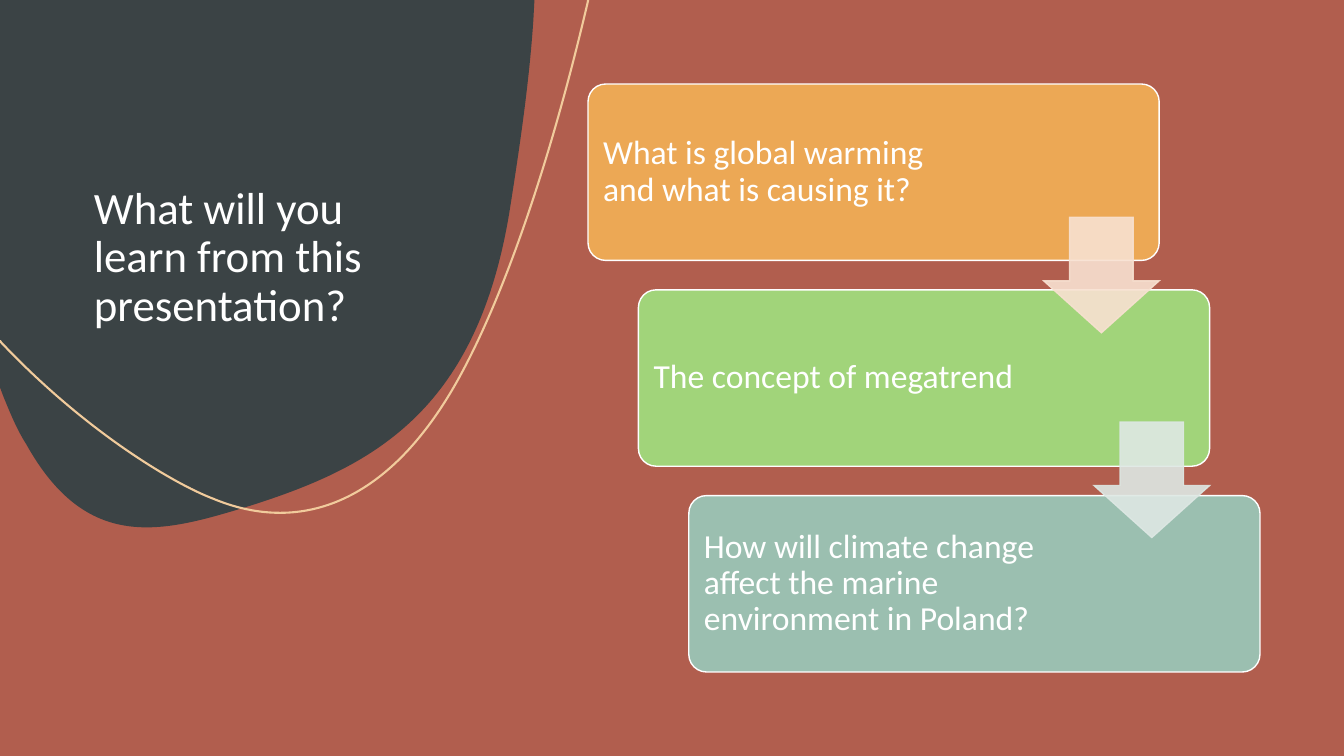
from pptx import Presentation, util as u
from pptx.dml.color import RGBColor
from pptx.enum import shapes, text
from pptx.oxml import parse_xml
from pptx.oxml.ns import nsdecls

# Content: boxes hold topic, text width, fill; arrows hold their colour
TITLE = "What will you learn from this presentation?"
TOPICS = [
    ("What is global warming and what is causing it?", 363, "ECA855"),
    ("The concept of megatrend", 377, "A1D47A"),
    ("How will climate change affect the marine environment in Poland?", 377, "9BBFB0"),
]
ARROWS = ["F8E1D1", "DEE8E4"]

# Outlines: a start point, then straight (1 point) or cubic (3 points) segments
BLOB_HEIGHT = 503
BLOB = [
    [(509, 0)],
    [(508, 19)],
    [(504, 79), (495, 140), (485, 203)],
    [(453, 395), (352, 446), (234, 483)],
    [(155, 507), (83, 527), (25, 423)],
    [(16, 409), (10, 394), (3, 377)],
    [(0, 369)],
    [(0, 0)],
]
SWOOSH_HEIGHT = 489
SWOOSH = [
    [(560, 0)],
    [(560, 1)],
    [(525, 151), (481, 281), (436, 362)],
    [(368, 484), (282, 508), (203, 475)],
    [(166, 461), (81, 411), (0, 325)],
    [(0, 324)],
]

THEME = dict(background="B15E4E", blob="3B4345", swoosh="F1CB9C", white="FFFFFF",
             font="Calibri", title_size=32, topic_size=24)

# Layout in px, 96 to the inch
PX = 9525
SLIDE = (1280, 720)
TITLE_AT = (80, 80, 320, 240)
BOX_AT, BOX_STEP = (560, 80, 544, 168), (48, 196)
ARROW_AT, ARROW_STEP = (994, 207, 110, 110), (48, 195)
TEXT_GAP = 5
INSET = u.Inches(0.1)


def emu(lengths):
    return [length * PX for length in lengths]


def stepped(at, step, index):
    left, top, width, height = at
    return left + index * step[0], top + index * step[1], width, height


def paint(fill, color):
    fill.solid()
    fill.fore_color.rgb = RGBColor.from_string(color)


def outline(shape, color, points):
    paint(shape.line.fill, color)
    shape.line.width = u.Pt(points)


def soften(shape, percent):
    """Make fill and line see-through and keep the line's corners sharp."""
    properties = shape._element.spPr
    for color in properties.xpath(".//a:srgbClr"):
        color.append(parse_xml(f'<a:alpha {nsdecls("a")} val="{percent * 1000}"/>'))
    properties.xpath("./a:ln")[0].append(
        parse_xml(f'<a:miter {nsdecls("a")} lim="800000"/>'))


def add_preset(kind, at, color, adjustments=()):
    shape = slide.shapes.add_shape(kind, *emu(at))
    shape.shadow.inherit = False
    for index, value in enumerate(adjustments):
        shape.adjustments[index] = value
    paint(shape.fill, color)
    return shape


def add_text(words, at, size, anchor, margins):
    frame = slide.shapes.add_textbox(*emu(at)).text_frame
    for name, value in dict(word_wrap=True, vertical_anchor=anchor, **margins).items():
        setattr(frame, name, value)
    paragraph = frame.paragraphs[0]
    paragraph.line_spacing = 0.9
    run = paragraph.add_run()
    run.text = words
    for name, value in dict(name=THEME["font"], size=u.Pt(size)).items():
        setattr(run.font, name, value)
    run.font.color.rgb = RGBColor.from_string(THEME["white"])


def add_curve(segments, height, close):
    """Lay every point as a straight step, then merge each cubic's three steps."""
    (start,), *rest = segments
    builder = slide.shapes.build_freeform(*emu(start))
    builder.add_line_segments([emu(point) for segment in rest for point in segment], close=close)
    shape = builder.convert_to_shape()
    shape.shadow.inherit = False

    outline_path = shape._element.spPr.xpath(".//a:path")[0]
    steps = iter(outline_path.xpath("./a:lnTo"))
    for segment in rest:
        group = [next(steps) for _ in segment]
        if len(group) == 3:
            cubic = parse_xml(f'<a:cubicBezTo {nsdecls("a")}/>')
            group[0].addprevious(cubic)
            for step in group:
                cubic.append(step[0])
                outline_path.remove(step)

    # Control points reach below the curve, so the frame ends at the curve itself
    shape.height = height * PX
    outline_path.set("h", str(height * PX))
    return shape


prs = Presentation()
prs.slide_width, prs.slide_height = emu(SLIDE)
slide = prs.slides.add_slide(prs.slide_layouts[6])

# Background and the panel that fills the slide
paint(slide.background.fill, THEME["background"])
panel = add_preset(shapes.MSO_SHAPE.RECTANGLE, (0, 0, *SLIDE), THEME["background"])
panel.line.fill.background()

# Dark corner and the thin curve over it
blob = add_curve(BLOB, BLOB_HEIGHT, True)
paint(blob.fill, THEME["blob"])
blob.line.fill.background()
swoosh = add_curve(SWOOSH, SWOOSH_HEIGHT, False)
swoosh.fill.background()
outline(swoosh, THEME["swoosh"], 1.5)

# Title
add_text(TITLE, TITLE_AT, THEME["title_size"], text.MSO_ANCHOR.BOTTOM, {})

# Staircase of topics
topic_margins = {f"margin_{side}": INSET for side in ("left", "top", "right", "bottom")}
for index, (topic, text_width, color) in enumerate(TOPICS):
    box_at = stepped(BOX_AT, BOX_STEP, index)
    box = add_preset(shapes.MSO_SHAPE.ROUNDED_RECTANGLE, box_at, color, [0.1])
    outline(box, THEME["white"], 1)
    left, top, _, height = box_at
    add_text(topic, (left + TEXT_GAP, top + TEXT_GAP, text_width, height - 2 * TEXT_GAP),
             THEME["topic_size"], text.MSO_ANCHOR.MIDDLE, topic_margins)

# Arrows from one topic to the next
for index, color in enumerate(ARROWS):
    arrow = add_preset(shapes.MSO_SHAPE.DOWN_ARROW, stepped(ARROW_AT, ARROW_STEP, index),
                       color, [0.55, 0.45])
    outline(arrow, color, 1)
    soften(arrow, 90)

prs.save("out.pptx")
